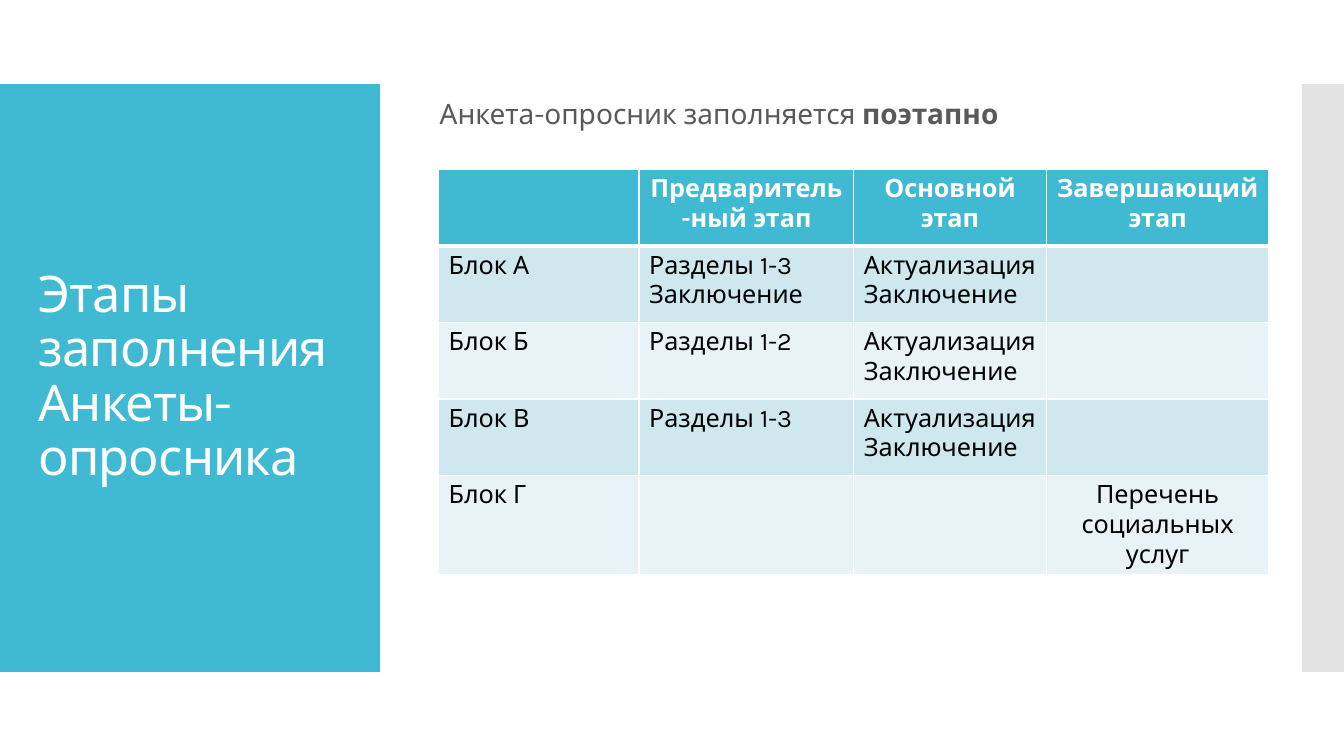
from dataclasses import dataclass

from lxml.etree import SubElement
from pptx import Presentation
from pptx.dml.color import RGBColor
from pptx.enum.shapes import MSO_SHAPE
from pptx.enum.text import MSO_ANCHOR, MSO_AUTO_SIZE, PP_ALIGN
from pptx.oxml.ns import qn
from pptx.util import Pt


@dataclass(frozen=True)
class Theme:
    """Colours, font and type sizes of the slide."""
    font: str = "Karla"
    accent: str = "40BAD2"
    side: str = "C8C8C8"
    white: str = "FFFFFF"
    body: str = "595959"
    black: str = "000000"
    bands: tuple = ("CFE7EE", "E8F3F7")
    title_size: int = 36
    body_size: int = 20
    table_size: int = 18


THEME = Theme()
COLUMN_WIDTHS = (143.3, 153.4, 137.5, 159.1)
ROW_HEIGHTS = (54.7, 54.7, 54.7, 54.7, 36)
UPDATE = "Актуализация\nЗаключение"
STAGES = (
    ("", "Предваритель-ный этап", "Основной этап", "Завершающий этап"),
    ("Блок А", "Разделы 1-3\nЗаключение", UPDATE, ""),
    ("Блок Б", "Разделы 1-2", UPDATE, ""),
    ("Блок В", "Разделы 1-3", UPDATE, ""),
    ("Блок Г", "", "", "Перечень социальных услуг"),
)


def style_paragraph(paragraph, size, color, bold=False, align=PP_ALIGN.LEFT):
    """Set the font and alignment of a paragraph."""
    paragraph.alignment = align
    font = paragraph.font
    font.name, font.size, font.bold = THEME.font, Pt(size), bold
    font.color.rgb = RGBColor.from_string(color)


def place(shape, left, top, width, height):
    """Move and size a shape in points."""
    shape.left, shape.top = Pt(left), Pt(top)
    shape.width, shape.height = Pt(width), Pt(height)


def add_band(slide, left, width, color, opacity=100):
    """Add a plain vertical band behind the placeholders."""
    band = slide.shapes.add_shape(
        MSO_SHAPE.RECTANGLE, Pt(left), Pt(60), Pt(width), Pt(420))
    band.shadow.inherit = False
    band.line.fill.background()
    band.fill.solid()
    band.fill.fore_color.rgb = RGBColor.from_string(color)
    if opacity < 100:
        fill_color = next(band.element.spPr.iter(qn("a:srgbClr")))
        SubElement(fill_color, qn("a:alpha"), val=str(opacity * 1000))
    slide.shapes.element.insert(2, band.element)


def fill_title(title):
    """Write the title on the coloured band."""
    place(title, 20.2, 88.6, 237.6, 362.2)
    frame = title.text_frame
    frame.text = "Этапы заполнения Анкеты-опросника"
    frame.auto_size = MSO_AUTO_SIZE.NONE
    frame.vertical_anchor = MSO_ANCHOR.MIDDLE
    paragraph = frame.paragraphs[0]
    paragraph.line_spacing = 0.9
    style_paragraph(paragraph, THEME.title_size, THEME.white)
    for properties in title.element.iter(qn("a:defRPr")):
        properties.set("spc", "-60")


def fill_body(body):
    """Write the lead sentence without a bullet."""
    place(body, 304.6, 67.7, 619.9, 403.2)
    frame = body.text_frame
    frame.auto_size = MSO_AUTO_SIZE.NONE
    frame.vertical_anchor = MSO_ANCHOR.TOP
    paragraph = frame.paragraphs[0]
    paragraph.add_run().text = "Анкета-опросник заполняется "
    stress = paragraph.add_run()
    stress.text = "поэтапно"
    stress.font.bold = True
    paragraph.line_spacing = 0.9
    paragraph.space_before = paragraph.space_after = Pt(2.5)
    properties = next(body.element.iter(qn("a:pPr")))
    properties.set("marL", str(Pt(2.2)))
    properties.set("indent", "0")
    SubElement(properties, qn("a:buNone"))
    style_paragraph(paragraph, THEME.body_size, THEME.body)


def add_borders(cell, bottom_width):
    """Draw white borders around a cell."""
    properties = cell._tc.get_or_add_tcPr()
    for side, width in (("L", 1), ("R", 1), ("T", 1), ("B", bottom_width)):
        line = SubElement(properties, qn(f"a:ln{side}"), w=str(Pt(width)))
        fill = SubElement(line, qn("a:solidFill"))
        SubElement(fill, qn("a:srgbClr"), val=THEME.white)


def fill_cell(cell, text, row, column):
    """Write one table cell and give it its fill and borders."""
    header = row == 0
    add_borders(cell, 3 if header else 1)
    fill = THEME.accent if header else THEME.bands[(row - 1) % 2]
    cell.fill.solid()
    cell.fill.fore_color.rgb = RGBColor.from_string(fill)
    cell.text_frame.text = text
    final_stage = column == len(COLUMN_WIDTHS) - 1
    if final_stage and text and not header:
        cell.vertical_anchor = MSO_ANCHOR.MIDDLE
    align = PP_ALIGN.CENTER if header or final_stage else PP_ALIGN.LEFT
    color = THEME.white if header else THEME.black
    for paragraph in cell.text_frame.paragraphs:
        style_paragraph(paragraph, THEME.table_size, color, header, align)


def add_stage_table(slide):
    """Add the table of blocks and stages."""
    table = slide.shapes.add_table(
        len(STAGES), len(COLUMN_WIDTHS), Pt(313.2), Pt(121),
        Pt(sum(COLUMN_WIDTHS)), Pt(sum(ROW_HEIGHTS))).table
    table.horz_banding = False
    for column, width in zip(table.columns, COLUMN_WIDTHS):
        column.width = Pt(width)
    for row, height in zip(table.rows, ROW_HEIGHTS):
        row.height = Pt(height)
    for row, texts in enumerate(STAGES):
        for column, text in enumerate(texts):
            fill_cell(table.cell(row, column), text, row, column)


def main():
    """Build and save the slide."""
    presentation = Presentation()
    presentation.slide_width, presentation.slide_height = Pt(960), Pt(540)
    slide = presentation.slides.add_slide(presentation.slide_layouts[1])
    add_band(slide, 930, 30, THEME.side, opacity=50)
    add_band(slide, 0, 271.3, THEME.accent)
    fill_title(slide.shapes.title)
    fill_body(slide.placeholders[1])
    add_stage_table(slide)
    presentation.save("out.pptx")


if __name__ == "__main__":
    main()
